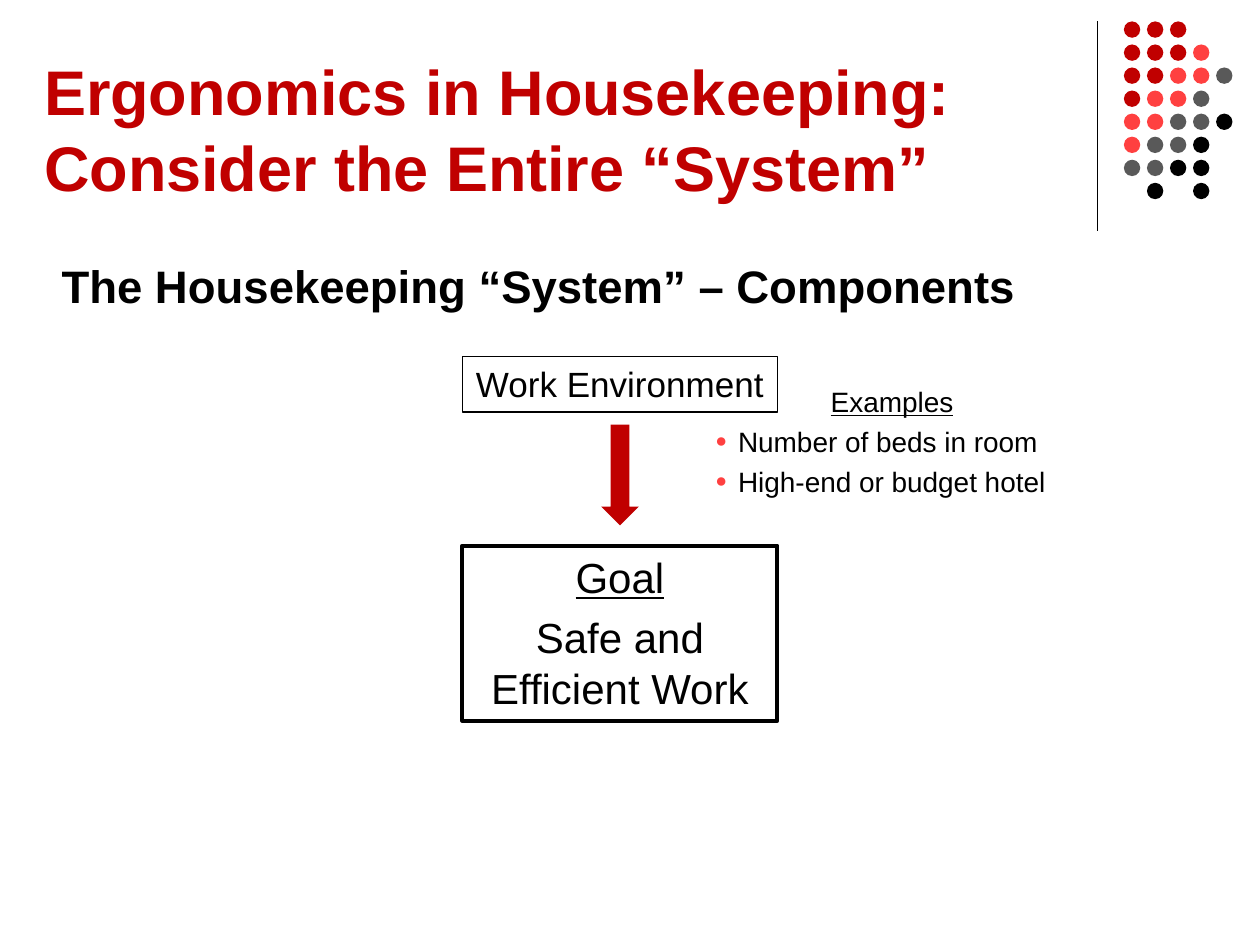
from lxml.etree import SubElement as Sub
from pptx import Presentation
from pptx.dml.color import RGBColor as RGB
from pptx.enum.shapes import MSO_CONNECTOR as Link, MSO_SHAPE as Kind
from pptx.enum.text import MSO_ANCHOR as Anchor, MSO_AUTO_SIZE as Fit, PP_ALIGN as Align
from pptx.oxml.ns import qn
from pptx.util import Inches, Pt

RED = RGB(0xC0, 0x00, 0x00)
CORAL = RGB(0xFF, 0x40, 0x40)
GRAY = RGB(0x59, 0x59, 0x59)
BLACK = RGB(0x00, 0x00, 0x00)
TONES = {"r": RED, "c": CORAL, "g": GRAY, "b": BLACK}
DOTS = ["rrr", "rrrc", "rrccg", "rccg", "ccggb", "cggb", "ggbb", " b b"]


def put(obj, form):
    for name, value in form.items():
        setattr(obj, name, value)


class Deck:
    face = "Arial"
    gap = 0.23

    def __init__(self):
        self.prs = Presentation()
        put(self.prs, {"slide_width": Inches(10), "slide_height": Inches(7.5)})
        self.slide = self.prs.slides.add_slide(self.prs.slide_layouts[5])
        self.shapes = self.slide.shapes

    def font(self, run, size, color=BLACK, **form):
        put(run.font, {"name": self.face, "size": Pt(size), **form})
        run.font.color.rgb = color

    def title(self, text, box, size, color):
        head = self.shapes.title
        put(head, dict(zip(("left", "top", "width", "height"), map(Inches, box))))
        frame = head.text_frame
        put(frame, {"text": text, "auto_size": Fit.NONE,
                    "vertical_anchor": Anchor.BOTTOM, "word_wrap": True})
        para = frame.paragraphs[0]
        para.alignment = Align.LEFT
        self.font(para.runs[0], size, color, bold=True)

    def rule(self, x, top, end):
        line = self.shapes.add_connector(Link.STRAIGHT, *map(Inches, (x, top, x, end)))
        line.line.color.rgb = BLACK
        line.line.width = Pt(0.75)
        Sub(line._element.spPr, qn("a:effectLst"))

    def solid(self, kind, box, color, home=None, turn=0):
        shape = (home or self.shapes).add_shape(kind, *map(Inches, box))
        shape.shadow.inherit = False
        shape.fill.solid()
        shape.fill.fore_color.rgb = color
        shape.line.fill.background()
        shape.rotation = turn

    def dots(self, left, top, step, size):
        group = self.shapes.add_group_shape().shapes
        for row, marks in enumerate(DOTS):
            for col, mark in enumerate(marks):
                if mark in TONES:
                    box = (left + col * step, top + row * step, size, size)
                    self.solid(Kind.OVAL, box, TONES[mark], group)

    def bullet(self, para):
        props = para._p.get_or_add_pPr()
        put_in = Inches(0.18)
        props.set("marL", str(put_in))
        props.set("indent", str(-put_in))
        Sub(Sub(props, qn("a:buClr")), qn("a:srgbClr"), val=str(CORAL))
        Sub(props, qn("a:buSzPct"), val="70000")
        Sub(props, qn("a:buFont"), typeface=self.face)
        Sub(props, qn("a:buChar"), char="●")

    def fill(self, frame, size, lines, align, form):
        put(frame, {"word_wrap": True, "auto_size": Fit.SHAPE_TO_FIT_TEXT,
                    "vertical_anchor": Anchor.TOP})
        for num, (text, style) in enumerate(lines):
            para = frame.add_paragraph() if num else frame.paragraphs[0]
            listed = style == "bullet"
            put(para, {"alignment": Align.LEFT if listed else align,
                       "space_before": Pt(round(size * self.gap, 1))})
            run = para.add_run()
            run.text = text
            self.font(run, size, underline=style == "head", **form)
            if listed:
                self.bullet(para)

    def text(self, box, size, lines, align=Align.LEFT, **form):
        area = self.shapes.add_textbox(*map(Inches, box))
        self.fill(area.text_frame, size, lines, align, form)

    def panel(self, box, size, lines, width):
        shape = self.shapes.add_shape(Kind.RECTANGLE, *map(Inches, box))
        shape.shadow.inherit = False
        shape.fill.background()
        shape.line.color.rgb = BLACK
        shape.line.width = Pt(width)
        self.fill(shape.text_frame, size, lines, Align.CENTER, {})


def main():
    deck = Deck()
    deck.rule(8.71, 0.17, 1.83)
    deck.dots(8.92, 0.17, 0.183, 0.13)
    deck.title("Ergonomics in Housekeeping: Consider the Entire “System”",
               (0.25, 0.25, 8.42, 1.42), 36, RED)
    deck.text((0.39, 2, 9.44, 0.54), 26,
              [("The Housekeeping “System” – Components", "plain")], bold=True)
    deck.panel((3.67, 4.33, 2.5, 1.39), 24,
               [("Goal", "head"), ("Safe and Efficient Work", "plain")], 2.25)
    deck.panel((3.67, 2.83, 2.5, 0.44), 20, [("Work Environment", "plain")], 0.75)
    deck.solid(Kind.UP_ARROW, (4.77, 3.37, 0.3, 0.8), RED, turn=180)
    deck.text((5.58, 3, 3, 1.02), 16,
              [("Examples", "head"), ("Number of beds in room", "bullet"),
               ("High-end or budget hotel", "bullet")], Align.CENTER)
    deck.prs.save("out.pptx")


if __name__ == "__main__":
    main()
